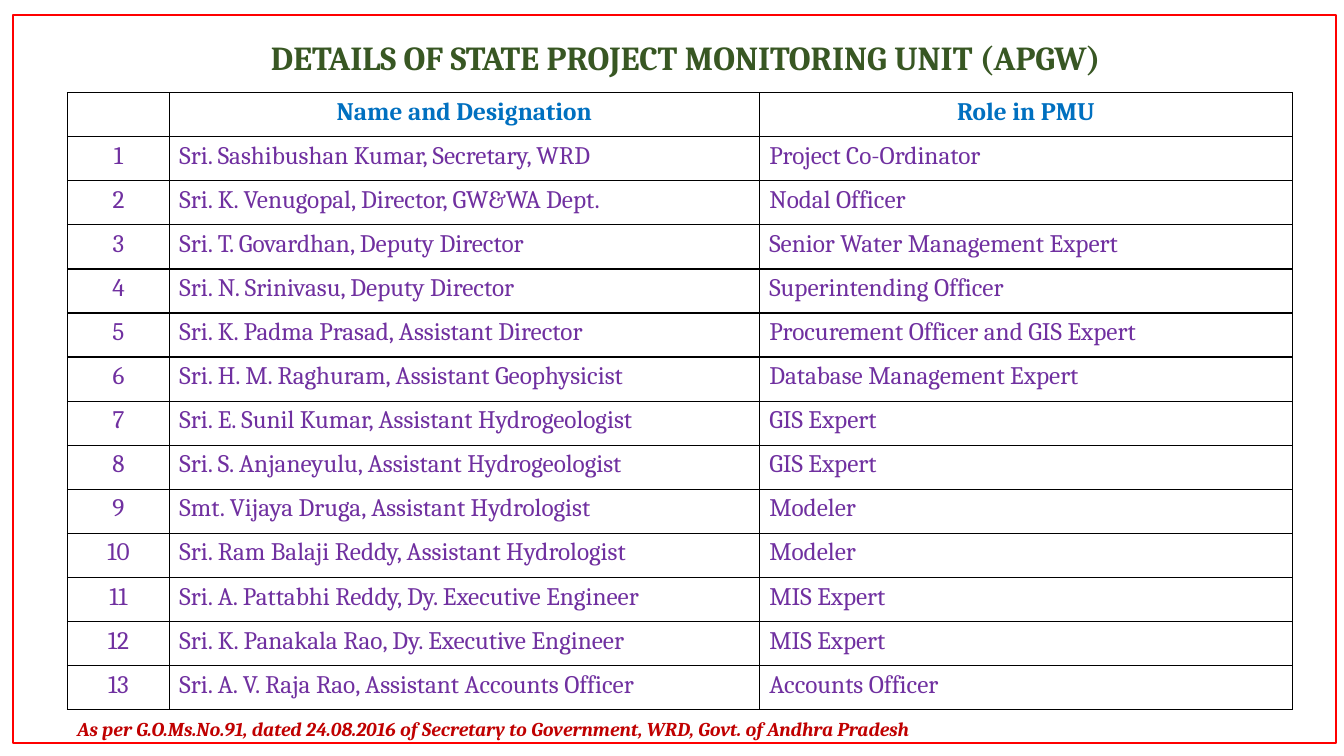
from lxml.etree import SubElement
from pptx import Presentation
from pptx.dml.color import RGBColor
from pptx.enum.shapes import MSO_SHAPE
from pptx.enum.text import MSO_ANCHOR, PP_ALIGN
from pptx.oxml.ns import qn
from pptx.util import Inches, Pt

FONT = "Cambria"
COLORS = {
    "title": "385723",
    "header": "0070C0",
    "body": "7030A0",
    "note": "C00000",
    "frame": "FF0000",
    "grid": "000000",
}
TITLE = "DETAILS OF STATE PROJECT MONITORING UNIT (APGW)"
NOTE = ("As per G.O.Ms.No.91, dated 24.08.2016 of Secretary to Government, "
        "WRD, Govt. of Andhra Pradesh")
HEADERS = ("", "Name and Designation", "Role in PMU")
MEMBERS = [
    ("Sri. Sashibushan Kumar, Secretary, WRD", "Project Co-Ordinator"),
    ("Sri. K. Venugopal, Director, GW&WA Dept.", "Nodal Officer"),
    ("Sri. T. Govardhan, Deputy Director", "Senior Water Management Expert"),
    ("Sri. N. Srinivasu, Deputy Director", "Superintending Officer"),
    ("Sri. K. Padma Prasad, Assistant Director", "Procurement Officer and GIS Expert"),
    ("Sri. H. M. Raghuram, Assistant Geophysicist", "Database Management Expert"),
    ("Sri. E. Sunil Kumar, Assistant Hydrogeologist", "GIS Expert"),
    ("Sri. S. Anjaneyulu, Assistant Hydrogeologist", "GIS Expert"),
    ("Smt. Vijaya Druga, Assistant Hydrologist", "Modeler"),
    ("Sri. Ram Balaji Reddy, Assistant Hydrologist", "Modeler"),
    ("Sri. A. Pattabhi Reddy, Dy. Executive Engineer", "MIS Expert"),
    ("Sri. K. Panakala Rao, Dy. Executive Engineer", "MIS Expert"),
    ("Sri. A. V. Raja Rao, Assistant Accounts Officer", "Accounts Officer"),
]
COLUMN_WIDTHS = (1.01, 5.85, 5.29)
TABLE_HEIGHT = 6.12


def write_text(text_frame, text, size, color, bold=False, italic=False, align=PP_ALIGN.LEFT):
    """Fill a text frame with one formatted paragraph."""
    text_frame.text = text
    paragraph = text_frame.paragraphs[0]
    paragraph.alignment = align
    paragraph.font.size = Pt(size)
    for run in paragraph.runs:
        run.font.name = FONT
        run.font.size = Pt(size)
        run.font.bold = bold
        run.font.italic = italic
        run.font.color.rgb = RGBColor.from_string(COLORS[color])
    return paragraph


def add_text(slide, box, text, size, color, **style):
    """Add a wrapping, vertically centred text box."""
    text_frame = slide.shapes.add_textbox(*map(Inches, box)).text_frame
    text_frame.word_wrap = True
    text_frame.vertical_anchor = MSO_ANCHOR.MIDDLE
    return write_text(text_frame, text, size, color, **style)


def set_borders(cell):
    """Draw a thin line on all four sides of a cell."""
    properties = cell._tc.get_or_add_tcPr()
    for side in ("a:lnL", "a:lnR", "a:lnT", "a:lnB"):
        line = SubElement(properties, qn(side), w=str(Pt(1)))
        fill = SubElement(line, qn("a:solidFill"))
        SubElement(fill, qn("a:srgbClr"), val=COLORS["grid"])


def add_member_table(slide):
    """Add the numbered table of members and their roles."""
    rows = [HEADERS] + [(str(number), *member) for number, member in enumerate(MEMBERS, 1)]
    table = slide.shapes.add_table(
        len(rows), len(HEADERS), Inches(0.67), Inches(0.92),
        Inches(sum(COLUMN_WIDTHS)), Inches(TABLE_HEIGHT)).table
    table.horz_banding = False
    for column, width in zip(table.columns, COLUMN_WIDTHS):
        column.width = Inches(width)
    for row_index, texts in enumerate(rows):
        table.rows[row_index].height = Inches(TABLE_HEIGHT / len(rows))
        is_header = row_index == 0
        for column_index, text in enumerate(texts):
            cell = table.cell(row_index, column_index)
            centred = is_header or column_index == 0
            write_text(cell.text_frame, text, 18, "header" if is_header else "body",
                       bold=is_header, align=PP_ALIGN.CENTER if centred else PP_ALIGN.LEFT)
            set_borders(cell)
            cell.fill.background()


def add_frame(slide):
    """Add the thin outline around the whole slide."""
    frame = slide.shapes.add_shape(
        MSO_SHAPE.RECTANGLE, Inches(0.13), Inches(0.15), Inches(13.12), Inches(7.22))
    frame.shadow.inherit = False
    frame.fill.background()
    frame.line.color.rgb = RGBColor.from_string(COLORS["frame"])
    frame.line.width = Pt(1)


def main():
    """Build and save the slide."""
    presentation = Presentation()
    presentation.slide_width = Inches(13.33)
    presentation.slide_height = Inches(7.5)
    slide = presentation.slides.add_slide(presentation.slide_layouts[6])
    title = add_text(slide, (0.67, 0.29, 12.26, 0.61), TITLE, 24, "title",
                     bold=True, align=PP_ALIGN.CENTER)
    title.line_spacing = 0.9
    add_member_table(slide)
    add_text(slide, (0.67, 7.06, 8.89, 0.34), NOTE, 14, "note", bold=True, italic=True)
    add_frame(slide)
    presentation.save("out.pptx")


if __name__ == "__main__":
    main()
